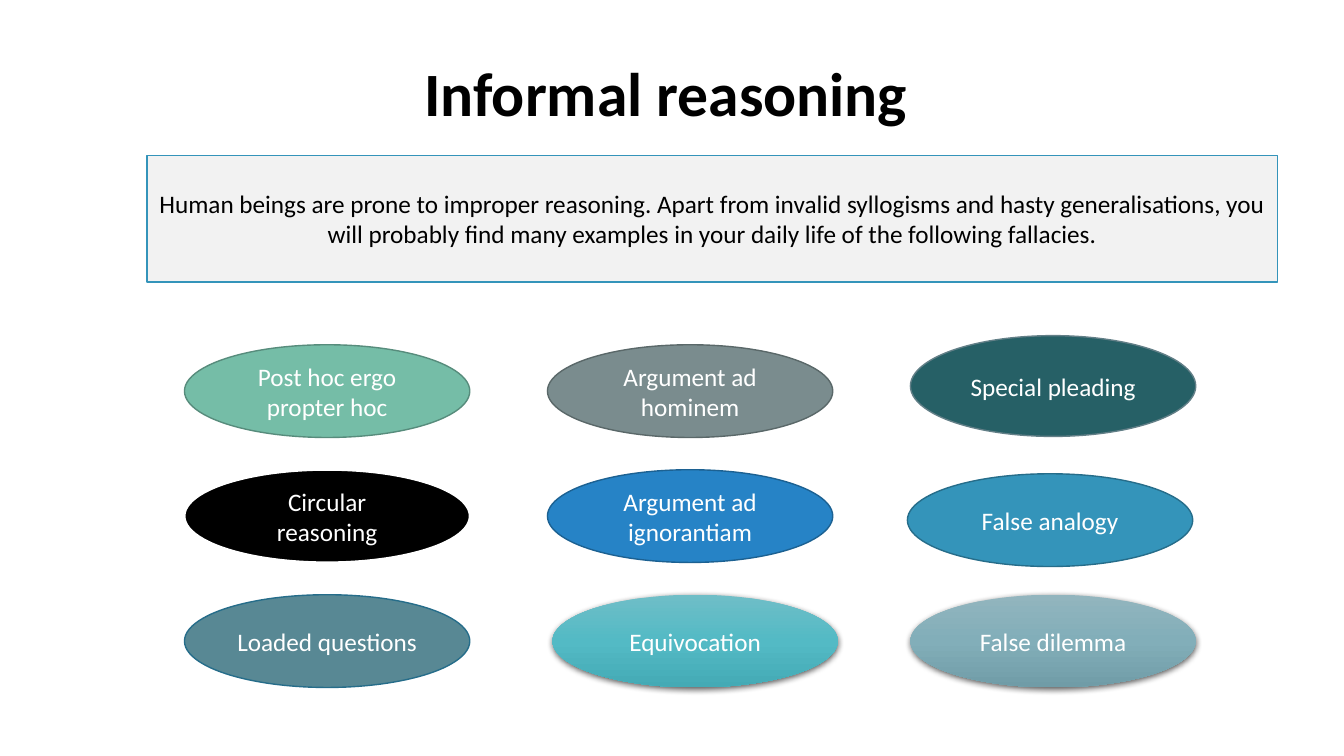
"""Build a slide that names nine fallacies of informal reasoning."""
from pptx import Presentation
from pptx.dml.color import RGBColor
from pptx.enum.shapes import MSO_SHAPE
from pptx.enum.text import MSO_ANCHOR, PP_ALIGN
from pptx.oxml import parse_xml
from pptx.oxml.ns import nsdecls
from pptx.util import Pt

BLACK = RGBColor(0x00, 0x00, 0x00)
WHITE = RGBColor(0xFF, 0xFF, 0xFF)
PALE = RGBColor(0xF2, 0xF2, 0xF2)
BLUE = RGBColor(0x34, 0x94, 0xBA)
NAVY = RGBColor(0x26, 0x6D, 0x8A)
GREEN = RGBColor(0x75, 0xBD, 0xA7)
MOSS = RGBColor(0x57, 0x8C, 0x7C)
GREY = RGBColor(0x7A, 0x8C, 0x8E)
SLATE = RGBColor(0x5A, 0x68, 0x69)
PINE = RGBColor(0x26, 0x60, 0x66)
STEEL = RGBColor(0x62, 0x7F, 0x87)
AZURE = RGBColor(0x26, 0x83, 0xC6)
COBALT = RGBColor(0x1C, 0x61, 0x92)
DUSK = RGBColor(0x58, 0x88, 0x94)
AQUA = [RGBColor(0x6F, 0xBE, 0xC7), RGBColor(0x53, 0xBA, 0xC5), RGBColor(0x44, 0xAA, 0xB5)]
MIST = [RGBColor(0x92, 0xB5, 0xBE), RGBColor(0x82, 0xAE, 0xB9), RGBColor(0x70, 0x9C, 0xA7)]

TITLE = "Informal reasoning"
INTRO = ("Human beings are prone to improper reasoning. Apart from invalid syllogisms "
         "and hasty generalisations, you will probably find many examples in your daily "
         "life of the following fallacies.")
ROWS = [
    [("Post hoc ergo propter hoc", GREEN, MOSS),
     ("Argument ad hominem", GREY, SLATE),
     ("Special pleading", PINE, STEEL)],
    [("Circular reasoning", BLACK, WHITE),
     ("Argument ad ignorantiam", AZURE, COBALT),
     ("False analogy", BLUE, NAVY)],
    [("Loaded questions", DUSK, NAVY),
     ("Equivocation", AQUA, None),
     ("False dilemma", MIST, None)],
]
NUDGE = {"Special pleading": (0, -9, 8), "False analogy": (-3, 4, 0), "Equivocation": (5, 0, 0)}

PX = 9144
LEFT, TOP, STEP_X, STEP_Y = 183, 342, 360, 124
WIDE, HIGH = 283, 92


def write(shape, text, size=18, color=WHITE, bold=False, align=PP_ALIGN.CENTER, space=None):
    frame = shape.text_frame
    frame.word_wrap = True
    frame.vertical_anchor = MSO_ANCHOR.MIDDLE
    para = frame.paragraphs[0]
    para.alignment = align
    para.line_spacing = space
    run = para.add_run()
    run.text = text
    font = run.font
    font.name, font.size, font.bold = "Calibri", Pt(size), bold
    font.color.rgb = color


def draw(slide, kind, box, fill, line, weight=1):
    shape = slide.shapes.add_shape(kind, *(n * PX for n in box))
    shape.shadow.inherit = False
    if line is None:
        shape.line.fill.background()
        shade(shape, fill)
    else:
        shape.fill.solid()
        shape.fill.fore_color.rgb = fill
        shape.line.color.rgb = line
        shape.line.width = Pt(weight)
    return shape


def shade(shape, colors):
    stops = "".join(f'<a:gs pos="{i * 50000}"><a:srgbClr val="{c}"/></a:gs>'
                    for i, c in enumerate(colors))
    props = shape.element.spPr
    props.insert(2, parse_xml(
        f'<a:gradFill {nsdecls("a")} rotWithShape="1"><a:gsLst>{stops}</a:gsLst>'
        '<a:lin ang="5400000" scaled="0"/></a:gradFill>'))
    props.find("{*}effectLst").append(parse_xml(
        f'<a:outerShdw {nsdecls("a")} blurRad="{Pt(4.5)}" dist="{Pt(1.5)}" dir="5400000" '
        'algn="ctr" rotWithShape="0"><a:srgbClr val="000000"><a:alpha val="63000"/>'
        '</a:srgbClr></a:outerShdw>'))


def main():
    deck = Presentation()
    deck.slide_width, deck.slide_height = 1333 * PX, 750 * PX
    slide = deck.slides.add_slide(deck.slide_layouts[6])

    title = slide.shapes.add_textbox(*(n * PX for n in (411, 37, 683, 117)))
    write(title, TITLE, size=44, color=BLACK, bold=True, align=PP_ALIGN.LEFT, space=0.9)
    intro = draw(slide, MSO_SHAPE.RECTANGLE, (146, 154, 1121, 126), PALE, BLUE)
    write(intro, INTRO, color=BLACK)

    for r, row in enumerate(ROWS):
        for c, (name, fill, line) in enumerate(row):
            dx, dy, dh = NUDGE.get(name, (0, 0, 0))
            box = (LEFT + c * STEP_X + dx, TOP + r * STEP_Y + dy, WIDE, HIGH + dh)
            weight = 1.5 if line == WHITE else 1
            write(draw(slide, MSO_SHAPE.OVAL, box, fill, line, weight), name)

    deck.save("out.pptx")


if __name__ == "__main__":
    main()
